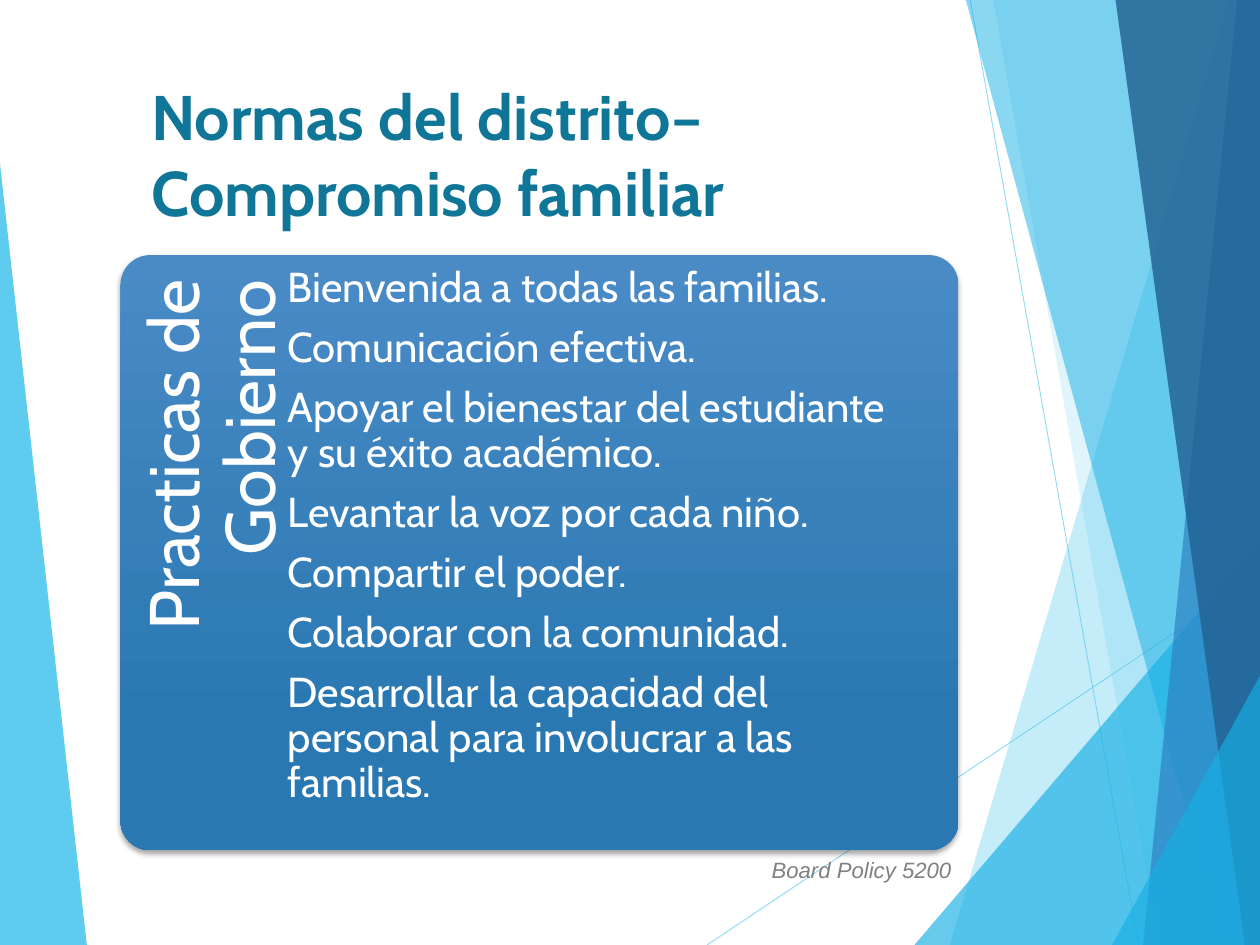
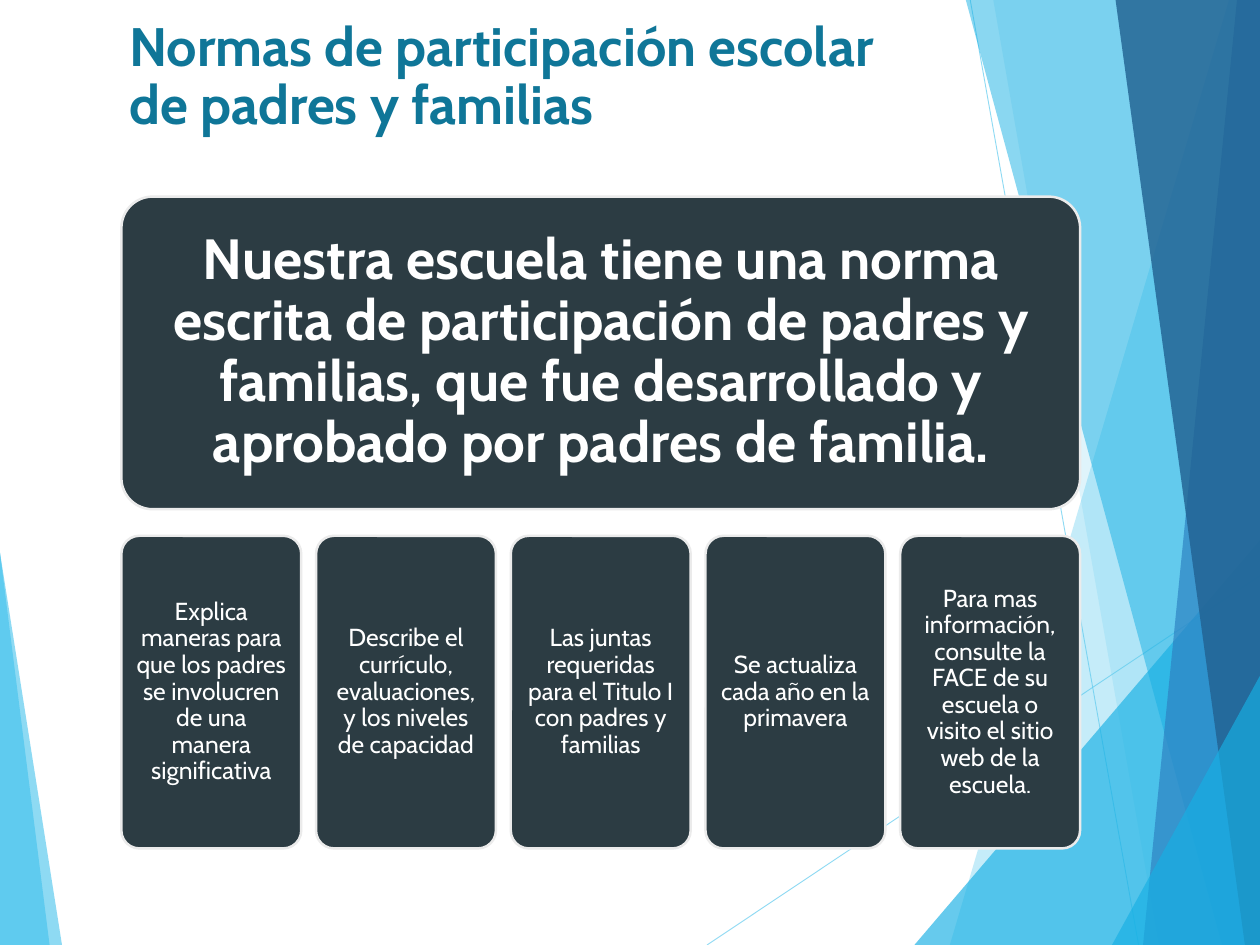
import pptx
import pptx.util
import pptx.dml.color
import pptx.enum.shapes
import pptx.enum.text
import pptx.oxml
import pptx.oxml.ns

Inches = pptx.util.Inches
Pt = pptx.util.Pt
Shape = pptx.enum.shapes.MSO_SHAPE
Align = pptx.enum.text.PP_ALIGN
Anchor = pptx.enum.text.MSO_ANCHOR

WIDE, HIGH = 14.22, 10.67
THEME = {
    "sky": "5FCBEF", "cyan": "17B0E4", "blue": "2E83C3", "navy": "226292",
    "title": "0F7698", "slate": "2C3C43", "edge": "EBEBEB", "white": "FFFFFF",
    "gray": "808080", "black": "000000", "top": "4A8BC6", "base": "2A78B2",
    "font": "Cabin", "plain": "Arial",
    "head": 51.2, "subhead": 44, "side": 57, "list": 34,
    "lead": 46, "card": 20, "note": 18,
}

BANDS = [
    ("sky", 70, [(0, 6.24), (0.7, HIGH), (0, HIGH)]),
    ("sky", 36, [(13.87, 0), (10.72, HIGH), (WIDE, HIGH), (WIDE, 0)]),
    ("sky", 20, [(11.21, 0), (13.08, HIGH), (WIDE, HIGH), (WIDE, 0)]),
    ("cyan", 66, [(10.32, HIGH), (WIDE, 6.1), (WIDE, HIGH)]),
    ("cyan", 50, [(10.9, 0), (13.79, HIGH), (WIDE, HIGH), (WIDE, 0)]),
    ("blue", 70, [(13.96, 0), (12.9, HIGH), (WIDE, HIGH), (WIDE, 0)]),
    ("navy", 82, [(12.59, 0), (14.05, HIGH), (WIDE, HIGH), (WIDE, 0)]),
    ("cyan", 66, [(12.55, HIGH), (WIDE, 7.63), (WIDE, HIGH)]),
]
RAYS = [(7.98, HIGH, WIDE, 6.5), (10.95, 0, 12.85, HIGH)]

NORMS = {
    "title": "Normas del distrito– Compromiso familiar",
    "side": "Practicas de Gobierno",
    "list": [
        "Bienvenida a todas las familias.",
        "Comunicación efectiva.",
        "Apoyar el bienestar del estudiante y su éxito académico.",
        "Levantar la voz por cada niño.",
        "Compartir el poder.",
        "Colaborar con la comunidad.",
        "Desarrollar la capacidad del personal para involucrar a las familias.",
    ],
    "note": "Board Policy 5200",
}
SCHOOL = {
    "title": "Normas de participación escolar de padres y familias",
    "lead": "Nuestra escuela tiene una norma escrita de participación de padres y "
            "familias, que fue desarrollado y aprobado por padres de familia.",
    "cards": [
        "Explica maneras para que los padres se involucren de una manera significativa",
        "Describe el currículo, evaluaciones, y los niveles de capacidad",
        "Las juntas requeridas para el Titulo I con padres y familias",
        "Se actualiza cada año en la primavera",
        "Para mas información, consulte la FACE de su escuela o visito el sitio web de la escuela.",
    ],
}


def tint(name):
    return pptx.dml.color.RGBColor.from_string(THEME[name])


def fade(shape, share):
    for node in shape._element.spPr.iter(pptx.oxml.ns.qn("a:srgbClr")):
        alpha = node.makeelement(pptx.oxml.ns.qn("a:alpha"), {"val": str(share * 1000)})
        node.append(alpha)


def effect(shape, inner=""):
    shape._element.spPr.append(pptx.oxml.parse_xml(
        f'<a:effectLst {pptx.oxml.ns.nsdecls("a")}>{inner}</a:effectLst>'))


def paint(shape, fill, edge=None):
    shape.shadow.inherit = False
    shape.fill.solid()
    shape.fill.fore_color.rgb = tint(fill)
    if edge:
        shape.line.color.rgb = tint(edge)
        shape.line.width = Pt(2)
    else:
        shape.line.fill.background()


def write(shape, text, *, size, color="white", font="font", bold=False, slant=False,
          align=Align.LEFT, anchor=Anchor.TOP, lead=None, after=0,
          inset=(0.1, 0.05, 0.1, 0.05)):
    frame = shape.text_frame
    frame.word_wrap = True
    frame.vertical_anchor = anchor
    (frame.margin_left, frame.margin_top,
     frame.margin_right, frame.margin_bottom) = map(Inches, inset)
    lines = [text] if isinstance(text, str) else text
    for spot, line in enumerate(lines):
        para = frame.add_paragraph() if spot else frame.paragraphs[0]
        para.alignment = align
        para.space_after = Pt(after)
        if lead:
            para.line_spacing = lead
        run = para.add_run()
        run.text = line
        run.font.name = THEME[font]
        run.font.size = Pt(THEME[size])
        run.font.bold = bold
        run.font.italic = slant
        run.font.color.rgb = tint(color)


def box(slide, place):
    return slide.shapes.add_textbox(*map(Inches, place))


def round_box(slide, place, curve):
    shape = slide.shapes.add_shape(Shape.ROUNDED_RECTANGLE, *map(Inches, place))
    shape.adjustments[0] = curve
    return shape


def draw_band(slide, color, share, points):
    first, *rest = [tuple(map(Inches, point)) for point in points]
    path = slide.shapes.build_freeform(*first)
    path.add_line_segments(rest, close=True)
    band = path.convert_to_shape()
    paint(band, color)
    fade(band, share)


def draw_ray(slide, ends):
    ray = slide.shapes.add_connector(
        pptx.enum.shapes.MSO_CONNECTOR.STRAIGHT, *map(Inches, ends))
    ray.line.color.rgb = tint("sky")
    ray.line.width = Pt(0.75)
    fade(ray, 70)
    effect(ray)


def start(deck, title, place, wedge, **style):
    slide = deck.slides.add_slide(deck.slide_layouts[6])
    draw_band(slide, *BANDS[0])
    for ends in RAYS:
        draw_ray(slide, ends)
    for band in BANDS[1:]:
        draw_band(slide, *band)
    write(box(slide, place), title, color="title", bold=True, **style)
    across, down = wedge
    side = slide.shapes.add_shape(
        Shape.ISOSCELES_TRIANGLE, 0, Inches(HIGH - down), Inches(across), Inches(down))
    side.adjustments[0] = 0
    paint(side, "sky")
    return slide


def norms(deck):
    slide = start(deck, NORMS["title"], (1.61, 0.83, 7.57, 2.05), (0.98, 8.82), size="head")
    write(box(slide, (8.61, 9.62, 3.67, 0.4)), NORMS["note"],
          size="note", color="gray", font="plain", slant=True)
    panel = round_box(slide, (1.36, 2.88, 9.46, 6.72), 0.05)
    panel.line.fill.background()
    panel.fill.gradient()
    panel.fill.gradient_angle = 270
    for stop, (spot, color) in zip(panel.fill.gradient_stops, [(0, "top"), (0.78, "base")]):
        stop.position = spot
        stop.color.rgb = tint(color)
    effect(panel, f'<a:outerShdw blurRad="{Pt(4)}" dist="{Pt(3)}" dir="5400000" rotWithShape="0">'
                  f'<a:srgbClr val="{THEME["black"]}"><a:alpha val="35000"/></a:srgbClr></a:outerShdw>')
    write(panel, NORMS["list"], size="list", lead=0.9, after=12, inset=(1.79, 0.03, 0.42, 0))
    side = box(slide, (-0.45, 4.69, 5.51, 1.89))
    side.rotation = 270
    write(side, NORMS["side"], size="side", align=Align.RIGHT, lead=0.9,
          inset=(0, 0.21, 0.28, 0))


def school(deck):
    slide = start(deck, SCHOOL["title"], (1.36, 0.17, 9.08, 2.05), (0.56, 4.43),
                  size="subhead", lead=0.9)
    left, span, width, tall = 1.37, 10.82, 2.03, 3.53
    cards = SCHOOL["cards"]
    step = (span - width) / (len(cards) - 1)
    tiles = [(SCHOOL["lead"], (left, 2.22, span, tall), "lead", True, 0.19)]
    tiles += [(text, (left + spot * step, 6.05, width, tall), "card", False, 0.08)
              for spot, text in enumerate(cards)]
    for text, place, size, bold, pad in tiles:
        tile = round_box(slide, place, 0.1)
        paint(tile, "slate", "edge")
        write(tile, text, size=size, bold=bold, align=Align.CENTER,
              anchor=Anchor.MIDDLE, lead=0.9, inset=(pad,) * 4)


def main():
    deck = pptx.Presentation()
    deck.slide_width = Inches(WIDE)
    deck.slide_height = Inches(HIGH)
    norms(deck)
    school(deck)
    deck.save("out.pptx")


if __name__ == "__main__":
    main()
